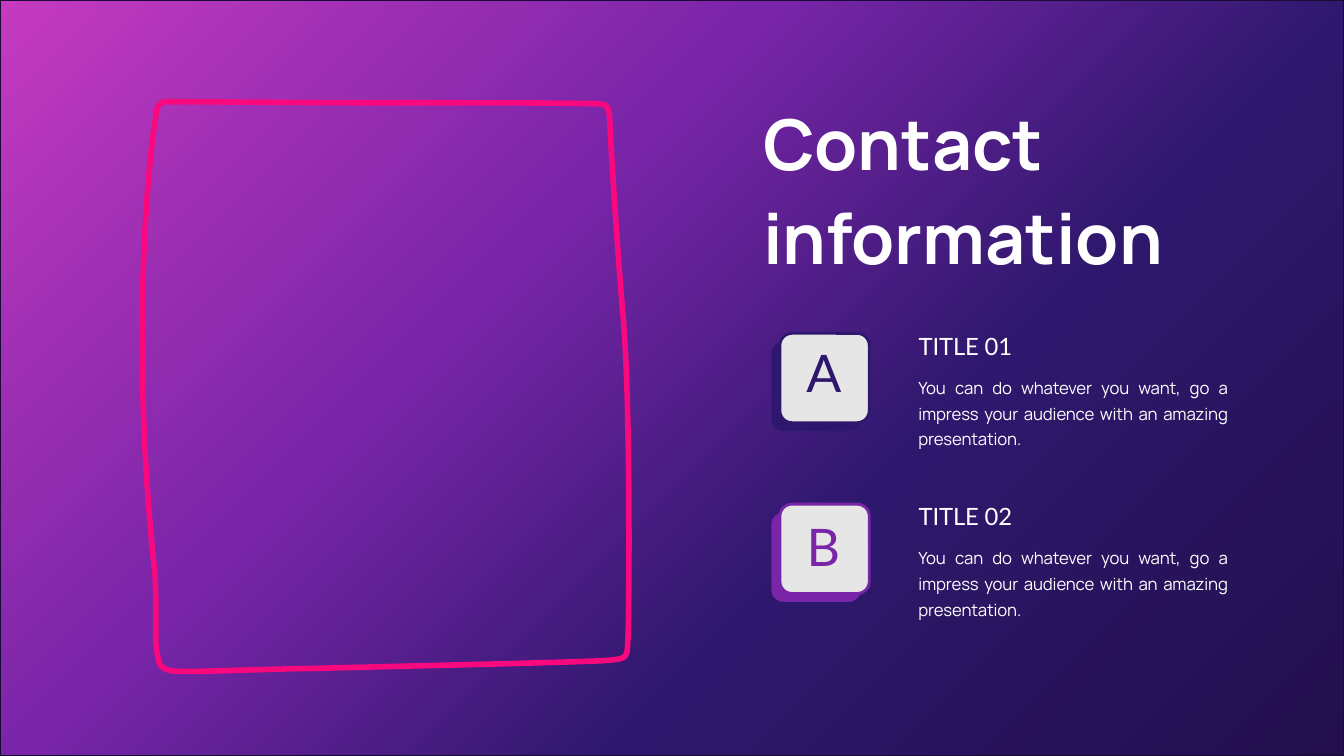
from copy import deepcopy

from lxml import etree
from pptx import Presentation
from pptx.dml.color import RGBColor
from pptx.enum.shapes import MSO_SHAPE
from pptx.enum.text import MSO_ANCHOR, MSO_AUTO_SIZE, PP_ALIGN
from pptx.oxml.ns import qn
from pptx.util import Pt

RECT, ROUNDED = MSO_SHAPE.RECTANGLE, MSO_SHAPE.ROUNDED_RECTANGLE
TOP, BOTTOM = MSO_ANCHOR.TOP, MSO_ANCHOR.BOTTOM
LEFT, CENTER, JUSTIFY = PP_ALIGN.LEFT, PP_ALIGN.CENTER, PP_ALIGN.JUSTIFY
GROW = MSO_AUTO_SIZE.SHAPE_TO_FIT_TEXT

COLORS = {
    "magenta": "C53ABF",
    "purple": "7925A8",
    "indigo": "2E186D",
    "night": "220F4C",
    "edge": "190B38",
    "pink": "F9087E",
    "grey": "E7E6E6",
    "white": "FFFFFF",
}


def rgb(name):
    return RGBColor.from_string(COLORS[name])


def add_text(box, lines, font, size, color, align=LEFT, anchor=BOTTOM,
             leading=None, tracking=None, bold=False):
    tf = s.shapes.add_textbox(*map(Pt, box)).text_frame
    tf.word_wrap = True
    tf.auto_size = GROW
    tf.vertical_anchor = anchor
    tf.text = "\n".join(lines)
    for p in tf.paragraphs:
        p.alignment = align
        if leading:
            p.line_spacing = Pt(leading)
        p.font.name = font
        p.font.size = Pt(size)
        p.font.bold = bold
        p.font.color.rgb = rgb(color)
        if tracking:
            for r in p.runs:
                r.font._element.set("spc", str(tracking))


prs = Presentation()
prs.slide_width, prs.slide_height = Pt(960), Pt(540)
s = prs.slides.add_slide(prs.slide_layouts[6])

sp = s.shapes.add_shape(RECT, 0, 0, prs.slide_width, prs.slide_height)
sp.shadow.inherit = False
sp.line.color.rgb = rgb("edge")
sp.line.width = Pt(1)
sp.fill.gradient()
sp.fill.gradient_angle = 315
first = sp.fill.gradient_stops[0]._gs
for i in range(2):
    first.addnext(deepcopy(first))
shades = [(0, "magenta"), (0.37, "purple"), (0.65, "indigo"), (1, "night")]
for stop, (position, color) in zip(sp.fill.gradient_stops, shades):
    stop.position = position
    stop.color.rgb = rgb(color)

add_text((538, 60.2, 429.8, 142.6), ["Contact", "information"],
         "Manrope", 50, "white", leading=67.5, bold=True)

BODY = ("You can do whatever you want, go a impress your audience "
        "with an amazing presentation.")
PITCH = 122
TILE = 63.8
items = [("A", "TITLE 01", "indigo", 559.4, 201.6),
         ("B", "TITLE 02", "purple", 558.9, 325.4)]
for i, (letter, title, color, letter_left, letter_top) in enumerate(items):
    dy = i * PITCH
    for x, y, fill in [(551, 244.1, color), (557.1, 238.1, "grey")]:
        sp = s.shapes.add_shape(ROUNDED, Pt(x), Pt(y + dy), Pt(TILE), Pt(TILE))
        sp.adjustments[0] = 0.135
        sp.shadow.inherit = False
        sp.fill.solid()
        sp.fill.fore_color.rgb = rgb(fill)
        if fill == "grey":
            sp.line.color.rgb = rgb(color)
            sp.line.width = Pt(2)
        else:
            sp.line.fill.background()
    add_text((649.1, 232.5 + dy, 235.4, 28.1), [title],
             "Lato", 17, "white", tracking=-10)
    add_text((648.9, 261.9 + dy, 235.4, 63.4), [BODY], "Manrope", 12, "white",
             JUSTIFY, TOP, leading=18.5, tracking=-10)
    add_text((letter_left, letter_top, 58.3, 90), [letter], "Lato", 37, color,
             CENTER, leading=94, tracking=-290)

START = (130.3, 72.7)
CURVES = [
    ((157, 72.7), (223.9, 73.4), (265, 73.4)),
    ((316.1, 73.4), (414.7, 73.4), (424.8, 74.2)),
    ((435.6, 73.4), (434.9, 78.5), (435.6, 85.7)),
    ((435.6, 92.2), (439.9, 164.2), (445, 225.4)),
    ((450.7, 286.6), (449.3, 441.4), (448.6, 455.8)),
    ((447.8, 470.2), (448.6, 470.2), (434.9, 471.6)),
    ((421.2, 473), (279.4, 475.9), (227.5, 477.4)),
    ((175, 478.1), (126.7, 481), (121, 478.8)),
    ((114.5, 476.6), (113.8, 475.9), (112.3, 466.6)),
    ((110.2, 456.5), (112.3, 460.8), (110.9, 411.8)),
    ((90.7, 229), (109.4, 90.7), (110.9, 86.4)),
    ((111.6, 82.1), (110.9, 73.4), (118.1, 72.7)),
    ((119.5, 72.7), (123.8, 72.7), START),
]
FRAME_LEFT, FRAME_WIDTH, FRAME_HEIGHT = 101.5, 347.8, 406.8
frame = s.shapes.build_freeform(Pt(START[0]), Pt(START[1]))
frame.add_line_segments([(Pt(x), Pt(y)) for curve in CURVES for x, y in curve],
                        close=True)
sp = frame.convert_to_shape()
outline = next(sp._element.iter(qn("a:path")))
shift = Pt(FRAME_LEFT) - sp.left
for pt in outline.iter(qn("a:pt")):
    pt.set("x", str(int(pt.get("x")) - shift))
segments = outline.findall(qn("a:lnTo"))
for i in range(0, len(segments), 3):
    bezier = etree.Element(qn("a:cubicBezTo"))
    segments[i].addprevious(bezier)
    for segment in segments[i:i + 3]:
        bezier.append(segment[0])
        outline.remove(segment)
sp.left, sp.width, sp.height = Pt(FRAME_LEFT), Pt(FRAME_WIDTH), Pt(FRAME_HEIGHT)
outline.set("w", str(sp.width))
outline.set("h", str(sp.height))
sp.shadow.inherit = False
sp.fill.background()
sp.line.color.rgb = rgb("pink")
sp.line.width = Pt(4)

prs.save("out.pptx")
